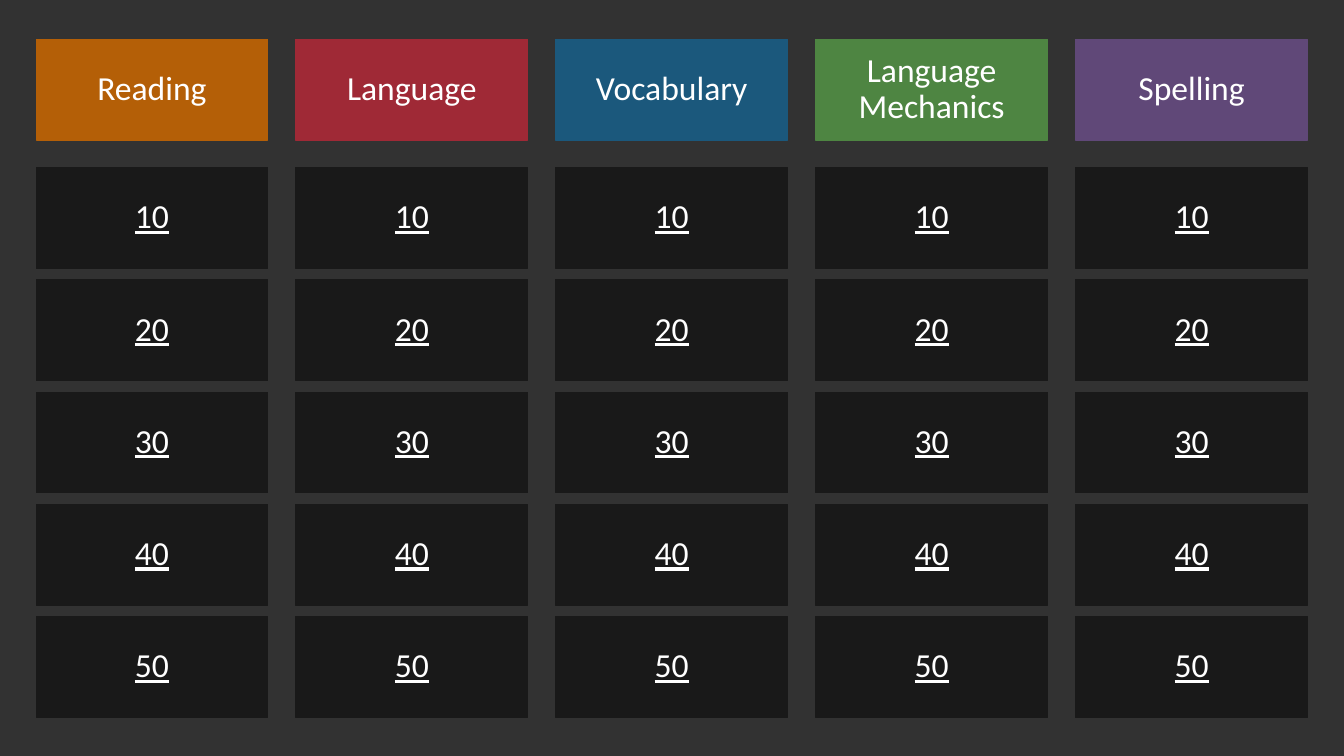
"""Build a quiz board with five topics and five point values each."""
from dataclasses import dataclass

from pptx import Presentation
from pptx import util as u
from pptx.dml.color import RGBColor
from pptx.enum import shapes, text
from pptx.slide import Slide

HUES = {
    "back": "323232",
    "tile": "191919",
    "text": "FFFFFF",
    "orange": "B45F07",
    "red": "9F2936",
    "blue": "1B587C",
    "green": "4E8542",
    "purple": "604878",
}
LEFT, STEP = 0.91, 6.55
HEAD, TOP, DROP = 0.99, 4.22, 2.83
WIDTH, HEIGHT = 5.84, 2.54
POINTS = range(10, 60, 10)


@dataclass
class Topic:
    name: str
    hue: str


@dataclass
class Tile:
    label: str
    hue: str
    left: float
    top: float
    under: bool = False


TOPICS = [
    Topic("Reading", "orange"),
    Topic("Language", "red"),
    Topic("Vocabulary", "blue"),
    Topic("Language Mechanics", "green"),
    Topic("Spelling", "purple"),
]


def tint(hue: str) -> RGBColor:
    return RGBColor.from_string(HUES[hue])


def draw(slide: Slide, tile: Tile) -> None:
    box = slide.shapes.add_shape(
        shapes.MSO_SHAPE.RECTANGLE,
        u.Cm(tile.left), u.Cm(tile.top), u.Cm(WIDTH), u.Cm(HEIGHT),
    )
    box.shadow.inherit = False
    box.fill.solid()
    box.fill.fore_color.rgb = tint(tile.hue)
    box.line.color.rgb = tint(tile.hue)
    box.line.width = u.Pt(0.75)
    frame = box.text_frame
    frame.text = tile.label
    frame.word_wrap = True
    frame.vertical_anchor = text.MSO_ANCHOR.MIDDLE
    para = frame.paragraphs[0]
    para.alignment = text.PP_ALIGN.CENTER
    para.line_spacing = 0.9
    font = para.runs[0].font
    font.name = "Calibri"
    font.size = u.Pt(24)
    font.color.rgb = tint("text")
    font.underline = tile.under


def main() -> None:
    deck = Presentation()
    deck.slide_width, deck.slide_height = u.Cm(33.87), u.Cm(19.05)
    slide = deck.slides.add_slide(deck.slide_layouts[6])
    fill = slide.background.fill
    fill.solid()
    fill.fore_color.rgb = tint("back")
    for col, topic in enumerate(TOPICS):
        left = LEFT + col * STEP
        draw(slide, Tile(topic.name, topic.hue, left, HEAD))
        for row, points in enumerate(POINTS):
            draw(slide, Tile(str(points), "tile", left, TOP + row * DROP, True))
    deck.save("out.pptx")


if __name__ == "__main__":
    main()
